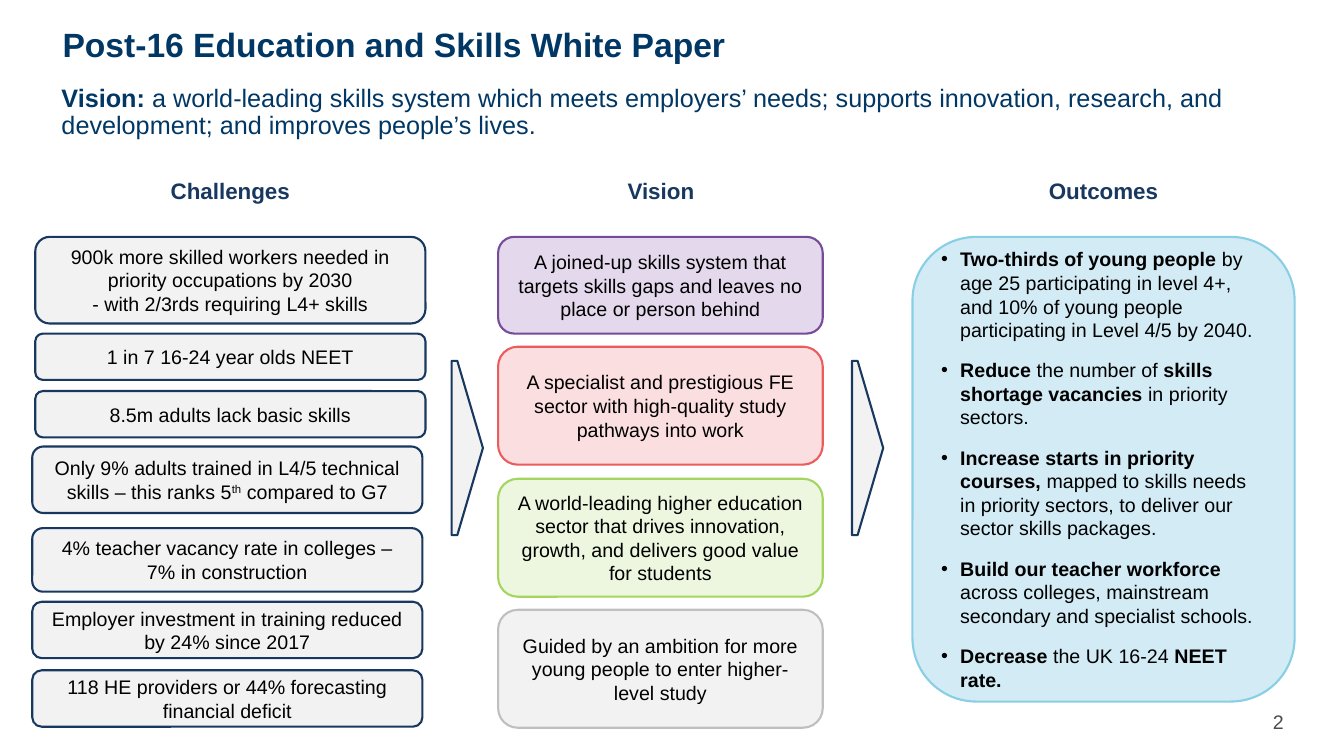
from pptx import Presentation
from pptx.dml.color import RGBColor
from pptx.enum.shapes import MSO_SHAPE
from pptx.enum.text import MSO_ANCHOR, PP_ALIGN
from pptx.oxml import parse_xml
from pptx.oxml.ns import nsdecls
from pptx.util import Inches, Pt

ROUND, ARROW = MSO_SHAPE.ROUNDED_RECTANGLE, MSO_SHAPE.PENTAGON
TOP, MIDDLE = MSO_ANCHOR.TOP, MSO_ANCHOR.MIDDLE
LEFT, CENTER, RIGHT = PP_ALIGN.LEFT, PP_ALIGN.CENTER, PP_ALIGN.RIGHT

COLORS = {
    "black": "000000", "title": "003764", "navy": "183860", "number": "4D4D4D",
    "gray": "F2F2F2", "edge": "BFBFBF",
    "lilac": "E4D9EC", "purple": "774B99",
    "pink": "FBDEDF", "red": "EB5C5D",
    "mint": "EDF7DF", "green": "A3D55F",
    "sky": "D2EBF5", "blue": "88CFE5",
}

HEADS = [(1.57, "Challenges"), (5.84, "Vision"), (10.23, "Outcomes")]

# left, top, height, text
CHALLENGES = [
    (0.35, 2.35, 0.86, "900k more skilled workers needed in priority occupations "
                       "by 2030\n- with 2/3rds requiring L4+ skills"),
    (0.35, 3.31, 0.46, "1 in 7 16-24 year olds NEET"),
    (0.35, 3.88, 0.46, "8.5m adults lack basic skills"),
    (0.32, 4.43, 0.66, [("Only 9% adults trained in L4/5 technical skills – this ranks 5", ""),
                        ("th", "super"), (" compared to G7", "")]),
    (0.32, 5.24, 0.63, "4% teacher vacancy rate in colleges – 7% in construction"),
    (0.32, 5.97, 0.56, "Employer investment in training reduced by 24% since 2017"),
    (0.32, 6.65, 0.56, "118 HE providers or 44% forecasting financial deficit"),
]

# top, height, fill, line, text
VISION = [
    (2.35, 0.96, "lilac", "purple", "A joined-up skills system that targets skills gaps "
                                    "and leaves no place or person behind"),
    (3.44, 1.17, "pink", "red", "A specialist and prestigious FE sector with high-quality "
                                "study pathways into work"),
    (4.75, 1.17, "mint", "green", "A world-leading higher education sector that drives "
                                  "innovation, growth, and delivers good value for students"),
    (6.05, 1.17, "gray", "edge", "Guided by an ambition for more young people to enter "
                                 "higher-level study"),
]

OUTCOMES = [
    [("Two-thirds of young people", "bold"),
     (" by age 25 participating in level 4+, and 10% of young people "
      "participating in Level 4/5 by 2040.", "")],
    [("Reduce ", "bold"), ("the number of ", ""), ("skills shortage vacancies ", "bold"),
     ("in priority sectors.", "")],
    [("Increase starts in priority courses, ", "bold"),
     ("mapped to skills needs in priority sectors, to deliver our sector skills packages.", "")],
    [("Build our teacher workforce ", "bold"),
     ("across colleges, mainstream secondary and specialist schools.", "")],
    [("Decrease ", "bold"), ("the UK 16-24 ", ""), ("NEET rate.", "bold")],
]


def rgb(name):
    return RGBColor.from_string(COLORS[name])


def add_bullet(para):
    props = para._p.get_or_add_pPr()
    props.set("marL", str(Inches(0.19)))
    props.set("indent", str(-Inches(0.19)))
    props.append(parse_xml(f'<a:buFont {nsdecls("a")} typeface="Arial"/>'))
    props.append(parse_xml(f'<a:buChar {nsdecls("a")} char="•"/>'))


def add_run(para, text, style, size, color, bold):
    run = para.add_run()
    run.text = text
    font = run.font
    font.name, font.size = "Arial", Pt(size)
    font.bold = bold or style == "bold"
    font.color.rgb = rgb(color)
    if style == "super":
        run._r.get_or_add_rPr().set("baseline", "30000")


def put_text(shape, paras, size=14, color="black", bold=False, align=CENTER,
             anchor=TOP, inset=None, spacing=None, bullet=False, gap=0):
    """Fill a shape; each paragraph is a string or a list of (text, style)."""
    frame = shape.text_frame
    frame.word_wrap = True
    frame.vertical_anchor = anchor
    if inset is not None:
        frame.margin_left = frame.margin_right = Inches(inset)
        frame.margin_top = frame.margin_bottom = Inches(inset)
    for i, parts in enumerate(paras):
        para = frame.add_paragraph() if i else frame.paragraphs[0]
        if bullet:
            add_bullet(para)
        para.alignment = align
        if spacing:
            para.line_spacing = spacing
        if i and gap:
            para.space_before = Pt(gap)
        for text, style in [(parts, "")] if isinstance(parts, str) else parts:
            for j, line in enumerate(text.split("\n")):
                if j:
                    para.add_line_break()
                add_run(para, line, style, size, color, bold)


def add_box(slide, x, y, w, h):
    return slide.shapes.add_textbox(Inches(x), Inches(y), Inches(w), Inches(h))


def add_shape(slide, kind, x, y, w, h, fill, line):
    shape = slide.shapes.add_shape(kind, Inches(x), Inches(y), Inches(w), Inches(h))
    shape.shadow.inherit = False
    shape.fill.solid()
    shape.fill.fore_color.rgb = rgb(fill)
    shape.line.color.rgb = rgb(line)
    shape.line.width = Pt(1.5)
    return shape


def add_card(slide, x, y, w, h, fill, line, text):
    card = add_shape(slide, ROUND, x, y, w, h, fill, line)
    put_text(card, [text], anchor=MIDDLE)


def add_title(slide, text):
    title = slide.shapes.title
    title.left, title.top = Inches(0.62), Inches(0.28)
    title.width, title.height = Inches(7.28), Inches(0.56)
    put_text(title, [text], size=24, color="title", bold=True, align=LEFT,
             inset=0, spacing=0.9)


def main():
    deck = Presentation()
    deck.slide_width, deck.slide_height = Inches(13.33), Inches(7.5)
    slide = deck.slides.add_slide(deck.slide_layouts[5])

    add_title(slide, "Post-16 Education and Skills White Paper")
    lead = [("Vision: ", "bold"),
            ("a world-leading skills system which meets employers’ needs; supports "
             "innovation, research, and development; and improves people’s lives.", "")]
    put_text(add_box(slide, 0.61, 0.85, 11.98, 0.56), [lead], size=18, color="title",
             align=LEFT, inset=0, spacing=0.9)

    for x, head in HEADS:
        put_text(add_box(slide, x, 1.71, 1.43, 0.37), [head], size=16, color="navy", bold=True)
    for x, y, h, text in CHALLENGES:
        add_card(slide, x, y, 3.87, h, "gray", "navy", text)
    for y, h, fill, line, text in VISION:
        add_card(slide, 4.94, y, 3.22, h, fill, line, text)
    for x in (4.48, 8.45):
        arrow = add_shape(slide, ARROW, x, 3.58, 0.31, 1.73, "gray", "navy")
        arrow.adjustments[0] = 0.82

    panel = add_shape(slide, ROUND, 9.05, 2.35, 3.79, 4.61, "sky", "blue")
    put_text(panel, OUTCOMES, align=LEFT, anchor=MIDDLE, bullet=True, gap=12)

    put_text(add_box(slide, 12.01, 6.99, 0.82, 0.4), ["2"], color="number", align=RIGHT)
    deck.save("out.pptx")


if __name__ == "__main__":
    main()
